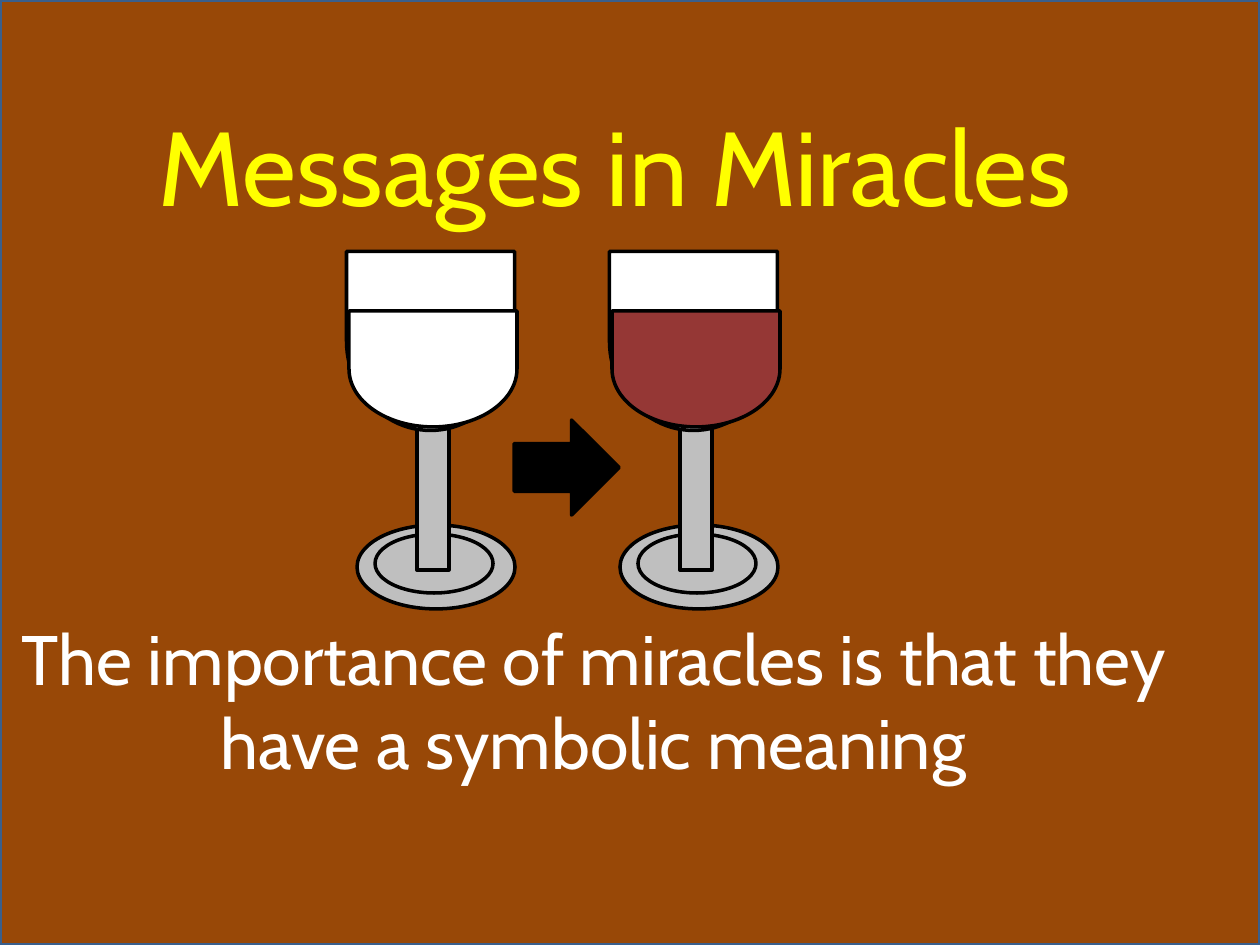
"""Build the Messages in Miracles slide, with water turning into wine."""
from pptx import Presentation
from pptx.dml.color import RGBColor
from pptx.enum.shapes import MSO_SHAPE
from pptx.enum.text import MSO_ANCHOR, PP_ALIGN
from pptx.util import Pt

SCALE = 914400 / 126
SILVER, WHITE, BLACK, WINE = "BFBFBF", "FFFFFF", "000000", "953735"


def color(value):
    return RGBColor.from_string(value)


def add_shape(shapes, kind, box, fill, line=BLACK):
    shape = shapes.add_shape(kind, *[round(length * SCALE) for length in box])
    shape.shadow.inherit = False
    shape.fill.solid()
    shape.fill.fore_color.rgb = color(fill)
    shape.line.color.rgb = color(line)
    shape.line.width = Pt(2)
    return shape


presentation = Presentation()
presentation.slide_width = round(1260 * SCALE)
presentation.slide_height = round(945 * SCALE)
slide = presentation.slides.add_slide(presentation.slide_layouts[0])

background = add_shape(slide.shapes, MSO_SHAPE.RECTANGLE, (0, 0, 1260, 945), "984807", "3A5F8C")
slide.shapes.title._element.addprevious(background._element)

texts = [
    (slide.shapes.title, "Messages in Miracles", (0, 95, 1229, 140), 60, "FFFF00"),
    (slide.placeholders[1], "The importance of miracles is that they have a symbolic meaning",
     (0, 609, 1187, 267), 40, WHITE),
]
for placeholder, text, box, size, text_color in texts:
    placeholder.left, placeholder.top, placeholder.width, placeholder.height = [
        round(length * SCALE) for length in box]
    frame = placeholder.text_frame
    frame.text = text
    frame.word_wrap = True
    frame.vertical_anchor = MSO_ANCHOR.TOP
    paragraph = frame.paragraphs[0]
    paragraph.alignment = PP_ALIGN.CENTER
    paragraph.space_before = Pt(0)
    paragraph.font.name = "Cabin"
    paragraph.font.size = Pt(size)
    paragraph.font.color.rgb = color(text_color)

for left, drink in [(341, WHITE), (604, WINE)]:
    glass = slide.shapes.add_group_shape().shapes
    add_shape(glass, MSO_SHAPE.OVAL, (left + 16, 525, 158, 84), SILVER)
    add_shape(glass, MSO_SHAPE.OVAL, (left + 34, 534, 118, 59), SILVER)
    add_shape(glass, MSO_SHAPE.RECTANGLE, (left + 76, 412, 32, 158), SILVER)
    bowl = add_shape(glass, MSO_SHAPE.FLOWCHART_DELAY, (left, 257, 179, 168), WHITE)
    liquid = add_shape(glass, MSO_SHAPE.FLOWCHART_DELAY, (left + 34, 285, 116, 168), drink)
    bowl.rotation = liquid.rotation = 90

add_shape(slide.shapes, MSO_SHAPE.RIGHT_ARROW, (514, 420, 105, 95), BLACK)

presentation.save("out.pptx")
